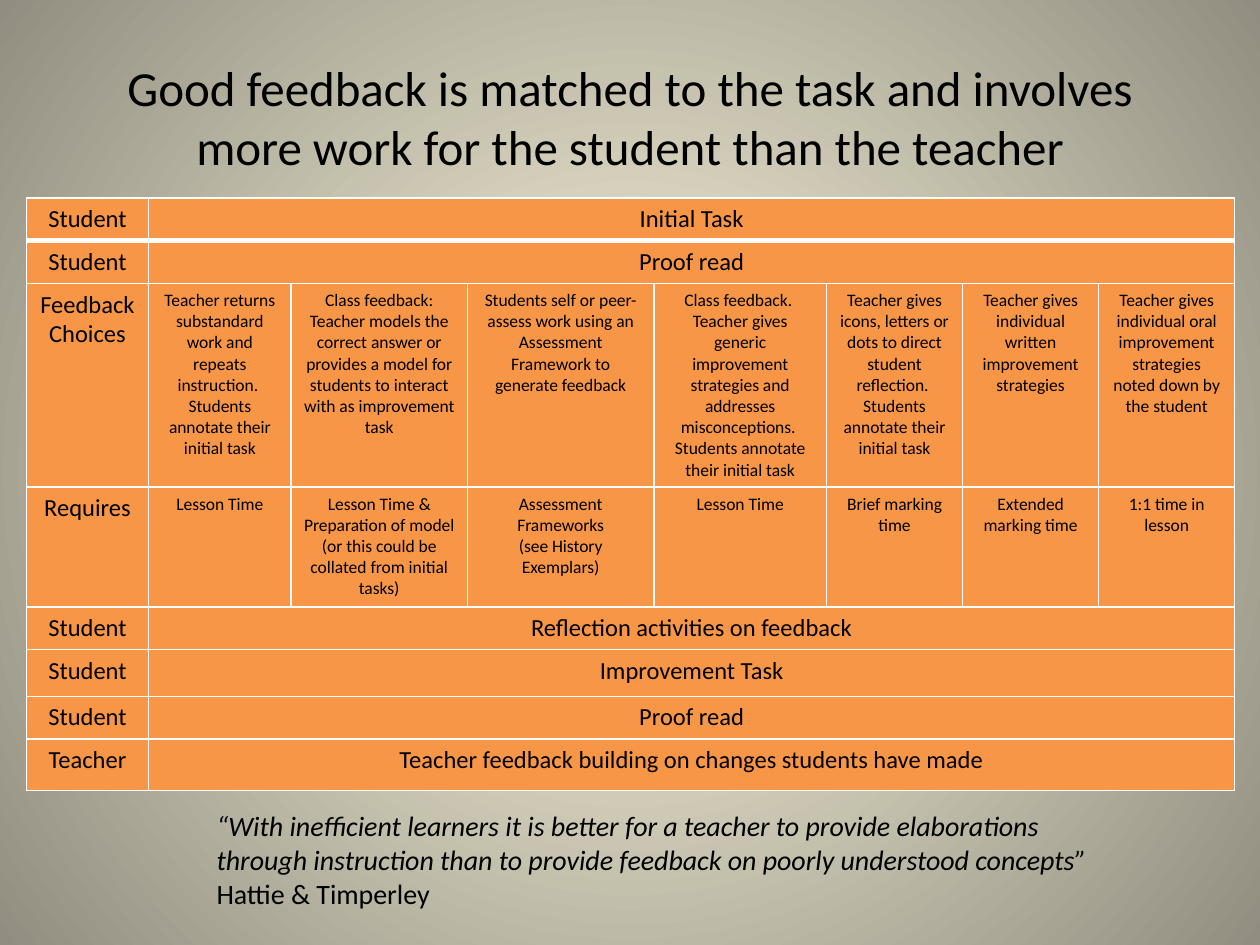
from lxml import etree
from pptx import Presentation
from pptx.dml.color import RGBColor
from pptx.enum.text import MSO_ANCHOR, MSO_AUTO_SIZE, PP_ALIGN
from pptx.oxml.ns import qn
from pptx.util import Inches, Pt

CENTER = PP_ALIGN.CENTER
MIDDLE = MSO_ANCHOR.MIDDLE
FIT_SHAPE = MSO_AUTO_SIZE.SHAPE_TO_FIT_TEXT
TITLE_ONLY = 5

BLACK = RGBColor(0x00, 0x00, 0x00)
WHITE = RGBColor(0xFF, 0xFF, 0xFF)
ORANGE = RGBColor(0xF7, 0x96, 0x46)
CREAM = RGBColor(0xFC, 0xF7, 0xDD)
STONE = RGBColor(0x91, 0x8E, 0x81)
FONT = "Calibri"

COLUMN_WIDTHS = [0.97, 1.13, 1.4, 1.48, 1.37, 1.08, 1.08, 1.08]
ROW_HEIGHTS = [0.34, 0.34, 1.61, 0.95, 0.34, 0.37, 0.34, 0.41]

# A row with a single entry after its label spans all choice columns
STAGES = [
    ["Student", "Initial Task"],
    ["Student", "Proof read"],
    [
        "Feedback\nChoices",
        "Teacher returns substandard work and repeats instruction.  "
        "Students annotate their initial task",
        "Class feedback: Teacher models the correct answer or provides "
        "a model for students to interact with as improvement task",
        "Students self or peer-assess work using an Assessment Framework "
        "to generate feedback",
        "Class feedback.  Teacher gives generic improvement strategies and "
        "addresses misconceptions.  Students annotate their initial task",
        "Teacher gives icons, letters or dots to direct student reflection.  "
        "Students annotate their initial task",
        "Teacher gives individual written improvement strategies",
        "Teacher gives individual oral improvement strategies noted down "
        "by the student",
    ],
    [
        "Requires",
        "Lesson Time",
        "Lesson Time & Preparation of model (or this could be collated "
        "from initial tasks)",
        "Assessment Frameworks\n(see History Exemplars)",
        "Lesson Time",
        "Brief marking time",
        "Extended marking time",
        "1:1 time in lesson",
    ],
    ["Student", "Reflection activities on feedback"],
    ["Student", "Improvement Task"],
    ["Student", "Proof read"],
    ["Teacher", "Teacher feedback building on changes students have made"],
]


def style_font(font, size):
    font.name = FONT
    font.size = Pt(size)
    font.color.rgb = BLACK


def paint_background(slide):
    fill = slide.background.fill
    fill.gradient()
    for stop, position, color in zip(fill.gradient_stops, (0, 1), (CREAM, STONE)):
        stop.position = position
        stop.color.rgb = color
    # Swap the linear direction for a circle from the centre
    gradient = next(slide.element.iter(qn("a:gradFill")))
    for linear in gradient.findall(qn("a:lin")):
        gradient.remove(linear)
    circle = etree.SubElement(gradient, qn("a:path"), path="circle")
    etree.SubElement(circle, qn("a:fillToRect"),
                     {side: "50000" for side in "ltrb"})


def add_title(slide, left, top, width, height):
    title = slide.shapes.title
    title.left, title.top, title.width, title.height = left, top, width, height
    frame = title.text_frame
    frame.text = ("Good feedback is matched to the task and involves "
                  "more work for the student than the teacher")
    frame.vertical_anchor = MIDDLE
    frame.paragraphs[0].alignment = CENTER
    style_font(frame.paragraphs[0].font, 28)


def set_borders(cell, top=1, bottom=1):
    properties = cell._tc.get_or_add_tcPr()
    for side, points in (("L", 1), ("R", 1), ("T", top), ("B", bottom)):
        line = etree.SubElement(properties, qn(f"a:ln{side}"), w=str(Pt(points)))
        solid = etree.SubElement(line, qn("a:solidFill"))
        etree.SubElement(solid, qn("a:srgbClr"), val=str(WHITE))


def fill_cell(cell, text, size):
    cell.text = text
    for paragraph in cell.text_frame.paragraphs:
        paragraph.alignment = CENTER
        style_font(paragraph.font, size)


def add_feedback_table(slide, left, top, width, height):
    table = slide.shapes.add_table(len(ROW_HEIGHTS), len(COLUMN_WIDTHS),
                                   left, top, width, height).table
    table.first_row = table.horz_banding = False
    for column, inches in zip(table.columns, COLUMN_WIDTHS):
        column.width = Inches(inches)
    for row, inches in zip(table.rows, ROW_HEIGHTS):
        row.height = Inches(inches)

    last_column = len(COLUMN_WIDTHS) - 1
    for r, entries in enumerate(STAGES):
        # Thick rule below the first row
        for cell in table.rows[r].cells:
            set_borders(cell, top=3 if r == 1 else 1, bottom=3 if r == 0 else 1)
            cell.fill.solid()
            cell.fill.fore_color.rgb = ORANGE
        spans = len(entries) == 2
        if spans:
            table.cell(r, 1).merge(table.cell(r, last_column))
        for c, text in enumerate(entries):
            fill_cell(table.cell(r, c), text, 14 if spans or c == 0 else 10)


def add_quote(slide, left, top, width, height):
    frame = slide.shapes.add_textbox(left, top, width, height).text_frame
    frame.word_wrap = True
    frame.auto_size = FIT_SHAPE
    frame.margin_top = Inches(0.35)
    paragraph = frame.paragraphs[0]
    style_font(paragraph.font, 16)
    quote = paragraph.add_run()
    quote.text = ("“With inefficient learners it is better for a teacher to "
                  "provide elaborations through instruction than to provide "
                  "feedback on poorly understood concepts” ")
    quote.font.italic = True
    paragraph.add_run().text = "Hattie & Timperley"


def main():
    prs = Presentation()
    prs.slide_width, prs.slide_height = Inches(10), Inches(7.5)
    slide = prs.slides.add_slide(prs.slide_layouts[TITLE_ONLY])
    paint_background(slide)
    add_title(slide, Inches(0.5), Inches(0.3), Inches(9), Inches(1.25))
    add_feedback_table(slide, Inches(0.21), Inches(1.57),
                       Inches(sum(COLUMN_WIDTHS)), Inches(sum(ROW_HEIGHTS)))
    add_quote(slide, Inches(1.62), Inches(6.07), Inches(7.49), Inches(1.21))
    prs.save("out.pptx")


if __name__ == "__main__":
    main()
